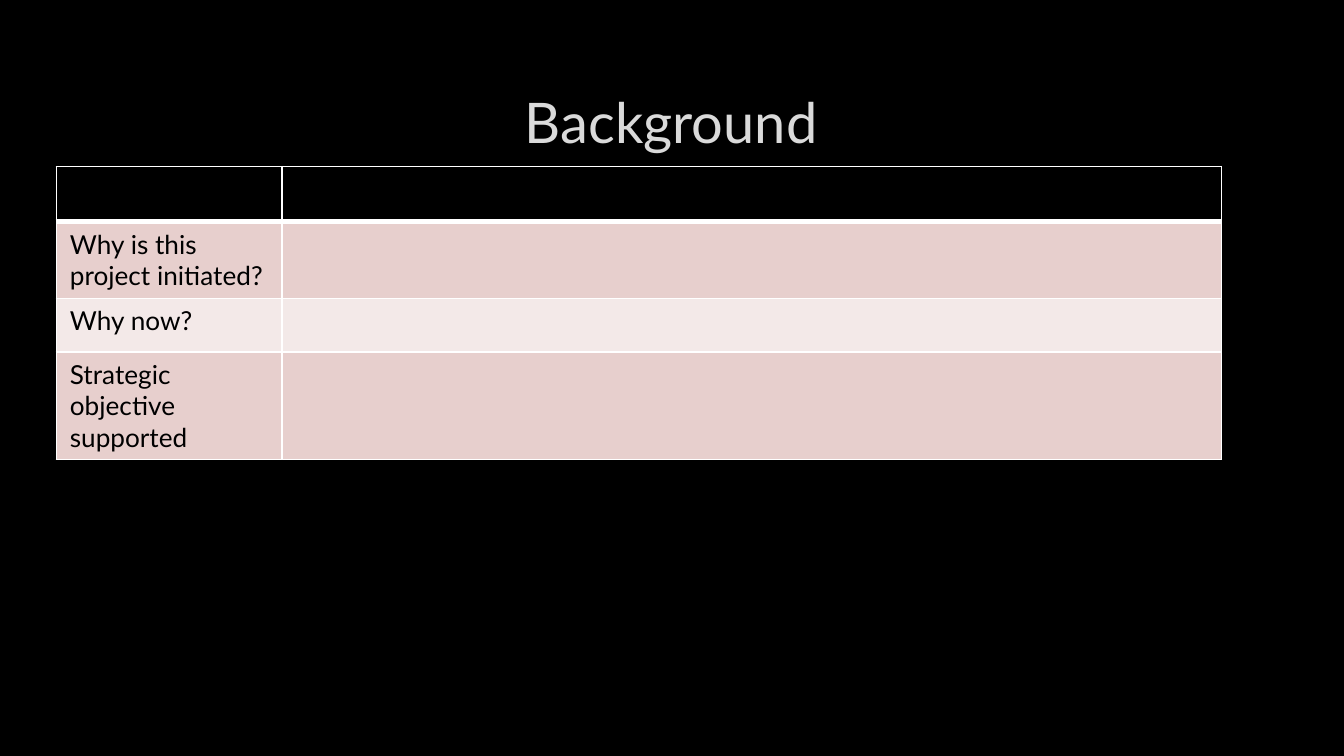
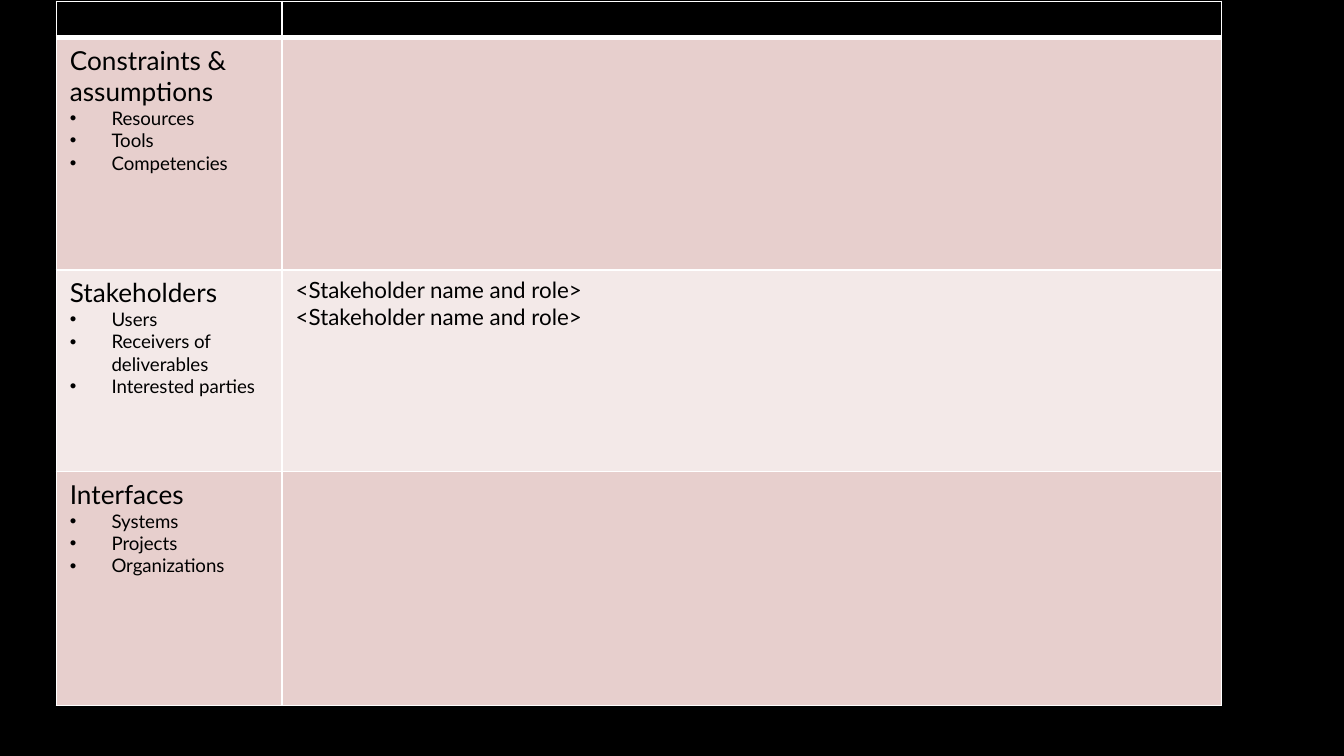
from dataclasses import dataclass
from lxml.etree import SubElement
from pptx import Presentation
from pptx.dml.color import RGBColor
from pptx.enum.text import MSO_ANCHOR, PP_ALIGN
from pptx.oxml.ns import qn
from pptx.util import Inches, Pt


@dataclass(frozen=True)
class Theme:
    font: str = "Lato"
    back: str = "000000"
    ink: str = "000000"
    title: str = "DADADA"
    edge: str = "404040"
    rule: str = "FFFFFF"
    bands: tuple = ("E7CFCD", "F3E9E8")
    head: int = 30
    label: int = 14
    note: int = 12
    item: int = 10
    thin: int = 1
    thick: int = 3


THEME = Theme()
WIDE = Inches(10)
LEFT = 0.42
COLS = (1.68, 6.99)

# Each cell is a list of (text, size, bulleted) lines
WHY = [
    [[("Why is this project initiated?", THEME.label, False)], []],
    [[("Why now?", THEME.label, False)], []],
    [[("Strategic objective", THEME.label, False),
      ("supported", THEME.label, False)], []],
]


def topic(name, *items):
    return [(name, THEME.label, False)] + [(i, THEME.item, True) for i in items]


SCOPE = [
    [topic("Constraints & assumptions", "Resources", "Tools", "Competencies"), []],
    [topic("Stakeholders", "Users", "Receivers of deliverables",
           "Interested parties"),
     [("<Stakeholder name and role>", THEME.note, False)] * 2],
    [topic("Interfaces", "Systems", "Projects", "Organizations"), []],
]


def style(font, size, color):
    look = {"name": THEME.font, "size": Pt(size), "bold": False}
    for key, value in look.items():
        setattr(font, key, value)
    font.color.rgb = RGBColor.from_string(color)


def paint(fill, color):
    fill.solid()
    fill.fore_color.rgb = RGBColor.from_string(color)


def stroke(parent, tag, width, color):
    line = SubElement(parent, qn(tag), w=str(Pt(width)))
    solid = SubElement(line, qn("a:solidFill"))
    tint = SubElement(solid, qn("a:srgbClr"), val=color)
    SubElement(line, qn("a:prstDash"), val="solid")
    return line, tint


def add_title(slide, text):
    title = slide.shapes.title
    box = {"left": 0.75, "top": 0.5, "width": 8.49, "height": 0.8}
    for key, value in box.items():
        setattr(title, key, Inches(value))
    frame = title.text_frame
    frame.vertical_anchor = MSO_ANCHOR.MIDDLE
    para = frame.paragraphs[0]
    para.alignment = PP_ALIGN.CENTER
    run = para.add_run()
    run.text = text
    style(run.font, THEME.head, THEME.title)
    # Faint outline around the letters
    props = run.font._element
    line, tint = stroke(props, "a:ln", 0.75, THEME.edge)
    SubElement(tint, qn("a:alpha"), val="10000")
    props.insert(0, line)


def add_bullet(para):
    props = para._p.get_or_add_pPr()
    props.set("marL", str(Inches(0.31)))
    props.set("indent", str(Inches(-0.31)))
    SubElement(props, qn("a:buFont"), typeface="Arial")
    SubElement(props, qn("a:buChar"), char="•")


def fill_cell(cell, lines, color, top, base):
    # Borders come before the fill in the cell properties
    props = cell._tc.get_or_add_tcPr()
    sides = {"L": THEME.thin, "R": THEME.thin, "T": top, "B": base}
    for side, width in sides.items():
        stroke(props, f"a:ln{side}", width, THEME.rule)
    if color:
        paint(cell.fill, color)
    else:
        cell.fill.background()
    frame = cell.text_frame
    if not lines:
        SubElement(frame.paragraphs[0]._p, qn("a:endParaRPr"),
                   sz=str(THEME.item * 100))
    for i, (text, size, dot) in enumerate(lines):
        para = frame.add_paragraph() if i else frame.paragraphs[0]
        run = para.add_run()
        run.text = text
        style(run.font, size, THEME.ink)
        if dot:
            add_bullet(para)


def add_grid(slide, top, rows, highs):
    cells = [[[], []]] + rows
    table = slide.shapes.add_table(
        len(cells), len(COLS), Inches(LEFT), Inches(top),
        Inches(sum(COLS)), Inches(sum(highs))).table
    table.first_row = table.horz_banding = False
    for col, width in zip(table.columns, COLS):
        col.width = Inches(width)
    for i, (row, high) in enumerate(zip(cells, highs)):
        table.rows[i].height = Inches(high)
        color = THEME.bands[(i - 1) % 2] if i else None
        # A heavy rule parts the header from the body
        above = THEME.thick if i == 1 else THEME.thin
        below = THEME.thin if i else THEME.thick
        for j, lines in enumerate(row):
            fill_cell(table.cell(i, j), lines, color, above, below)


def main():
    deck = Presentation()
    deck.slide_width, deck.slide_height = WIDE, WIDE * 9 // 16
    paint(deck.slide_master.background.fill, THEME.back)
    bare, titled = deck.slide_layouts[6], deck.slide_layouts[5]

    # Background
    slide = deck.slides.add_slide(titled)
    add_title(slide, "Background")
    add_grid(slide, 1.24, WHY, (0.41, 0.57, 0.4, 0.8))

    # Constraints, stakeholders and interfaces
    slide = deck.slides.add_slide(bare)
    add_grid(slide, 0.01, SCOPE, (0.27, 1.73, 1.5, 1.74))

    deck.save("out.pptx")


if __name__ == "__main__":
    main()
